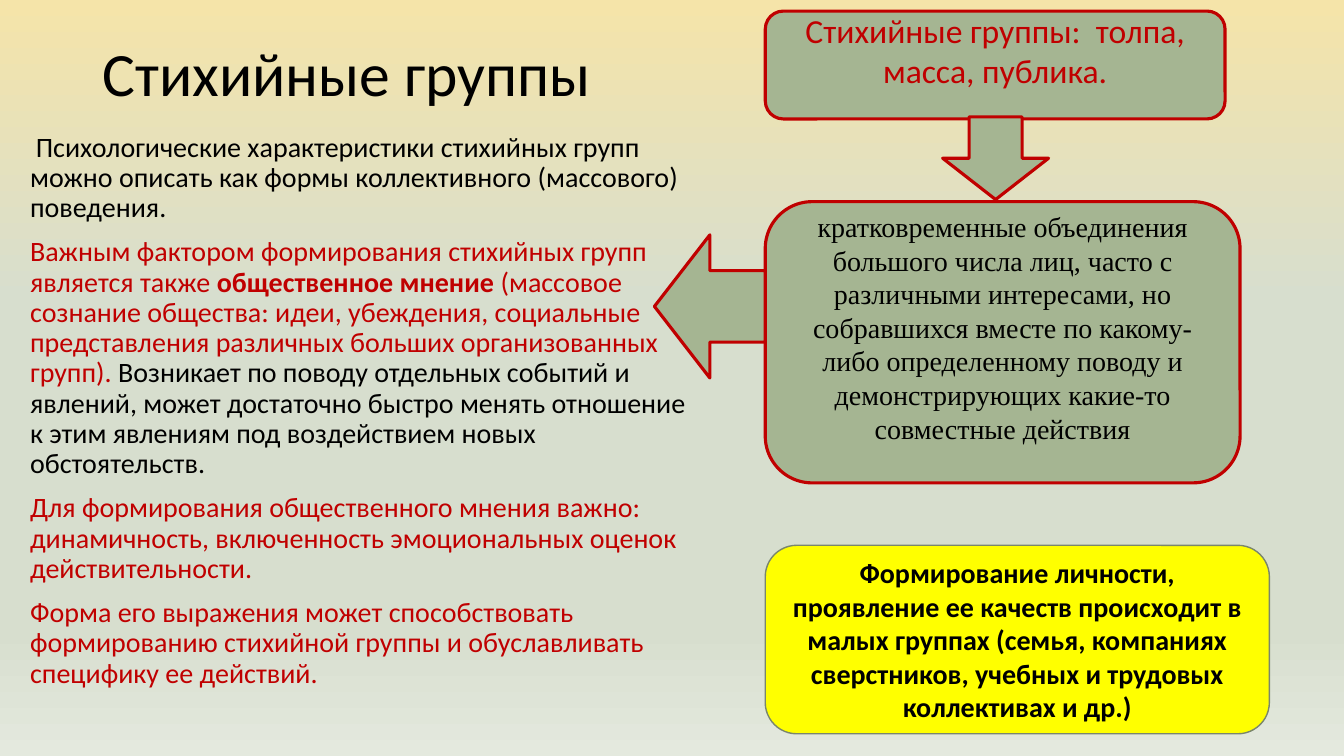
from lxml.etree import SubElement
from pptx import Presentation
from pptx.dml.color import RGBColor
from pptx.enum.shapes import MSO_SHAPE
from pptx.enum.text import MSO_ANCHOR, PP_ALIGN
from pptx.oxml.ns import qn
from pptx.util import Inches, Pt

BLACK, RED, GREEN, YELLOW, OLIVE = "000000", "C00000", "A5B592", "FFFF00", "7A866C"
BACKGROUND_STOPS = [(0, "F5E4A9"), (40, "D7DECE"), (83, "D7DECE"), (100, "E4E9DE")]


def color(hex_string):
    return RGBColor.from_string(hex_string)


def add_text(paragraph, text, size=20, font="Calibri", fill=BLACK, bold=False):
    run = paragraph.add_run()
    run.text = text
    run.font.size = Pt(size)
    run.font.name = font
    run.font.bold = bold
    run.font.color.rgb = color(fill)


class SlideBuilder:
    """Places elements by percentages of the slide's width and height."""

    def __init__(self, presentation):
        self.width = presentation.slide_width
        self.height = presentation.slide_height
        self.slide = presentation.slides.add_slide(presentation.slide_layouts[6])

    def place(self, left, top, width, height):
        return (round(self.width * left / 100), round(self.height * top / 100),
                round(self.width * width / 100), round(self.height * height / 100))

    def background(self, stops):
        fill = self.slide.background.fill
        fill.gradient()
        fill.gradient_angle = 270
        stop_list = next(self.slide.element.iter(qn("a:gsLst")))
        for stop in list(stop_list):
            stop_list.remove(stop)
        for position, hex_string in stops:
            stop = SubElement(stop_list, qn("a:gs"), pos=str(position * 1000))
            SubElement(stop, qn("a:srgbClr"), val=hex_string)

    def text_box(self, area, paragraphs, anchor=MSO_ANCHOR.TOP):
        frame = self.slide.shapes.add_textbox(*self.place(*area)).text_frame
        frame.word_wrap = True
        frame.vertical_anchor = anchor
        for index, runs in enumerate(paragraphs):
            paragraph = frame.add_paragraph() if index else frame.paragraphs[0]
            paragraph.line_spacing = 0.9
            paragraph.space_before = Pt(10 if len(paragraphs) > 1 else 0)
            for text, style in runs:
                add_text(paragraph, text, **style)

    def shape(self, kind, area, fill=GREEN, line=RED, line_width=2.25):
        shape = self.slide.shapes.add_shape(kind, *self.place(*area))
        shape.shadow.inherit = False
        shape.fill.solid()
        shape.fill.fore_color.rgb = color(fill)
        shape.line.color.rgb = color(line)
        shape.line.width = Pt(line_width)
        return shape

    def card(self, area, text, style, bottom=0.05, **look):
        frame = self.shape(MSO_SHAPE.ROUNDED_RECTANGLE, area, **look).text_frame
        frame.word_wrap = True
        frame.vertical_anchor = MSO_ANCHOR.MIDDLE
        frame.margin_bottom = Inches(bottom)
        paragraph = frame.paragraphs[0]
        paragraph.alignment = PP_ALIGN.CENTER
        add_text(paragraph, text, **style)


def main():
    presentation = Presentation()
    presentation.slide_width = Inches(13.33)
    presentation.slide_height = Inches(7.5)
    builder = SlideBuilder(presentation)
    builder.background(BACKGROUND_STOPS)

    # Title and body text
    builder.text_box((6.9, 5.33, 86.27, 9.6), [[("Стихийные группы", {"size": 44})]],
                     anchor=MSO_ANCHOR.MIDDLE)
    red = {"fill": RED}
    builder.text_box((1.5, 16.93, 51.46, 66), [
        [(" ", {"size": 18, "bold": True}),
         ("Психологические характеристики стихийных групп можно описать как формы "
          "коллективного (массового) поведения.", {})],
        [("Важным фактором формирования стихийных групп является также ", red),
         ("общественное мнение ", {"fill": RED, "bold": True}),
         ("(массовое сознание общества: идеи, убеждения, социальные представления "
          "различных больших организованных групп). ", red),
         ("Возникает по поводу отдельных событий и явлений, может достаточно быстро "
          "менять отношение к этим явлениям под воздействием новых обстоятельств.", {})],
        [("Для формирования общественного мнения важно: динамичность, включенность "
          "эмоциональных оценок действительности.", red)],
        [("Форма его выражения может способствовать формированию стихийной группы "
          "и обуславливать специфику ее действий.", red)],
    ])

    # Cards share one left edge
    column = 56.94
    builder.card((column, 72.13, 37.51, 24.93),
                 "Формирование личности, проявление ее качеств происходит в малых группах "
                 "(семья, компаниях сверстников, учебных и трудовых коллективах и др.)",
                 {"bold": True}, fill=YELLOW, line=OLIVE, line_width=1)
    builder.card((column, 1.47, 34.21, 14.27), "Стихийные группы:  толпа, масса, публика.",
                 {"size": 24, "fill": RED}, bottom=0.35)
    builder.card((column, 26.67, 35.33, 37.2),
                 "кратковременные объединения большого числа лиц, часто с различными "
                 "интересами, но собравшихся вместе по какому-либо определенному поводу "
                 "и демонстрирующих какие-то совместные действия",
                 {"font": "Times New Roman"}, bottom=0.35)

    # Arrows from the definition card
    arrow_width = 8.25
    builder.shape(MSO_SHAPE.DOWN_ARROW, (70.14, 15.47, 7.88, 10.93))
    builder.shape(MSO_SHAPE.LEFT_ARROW, (column - arrow_width, 31.07, arrow_width, 18.93))

    presentation.save("out.pptx")


if __name__ == "__main__":
    main()
